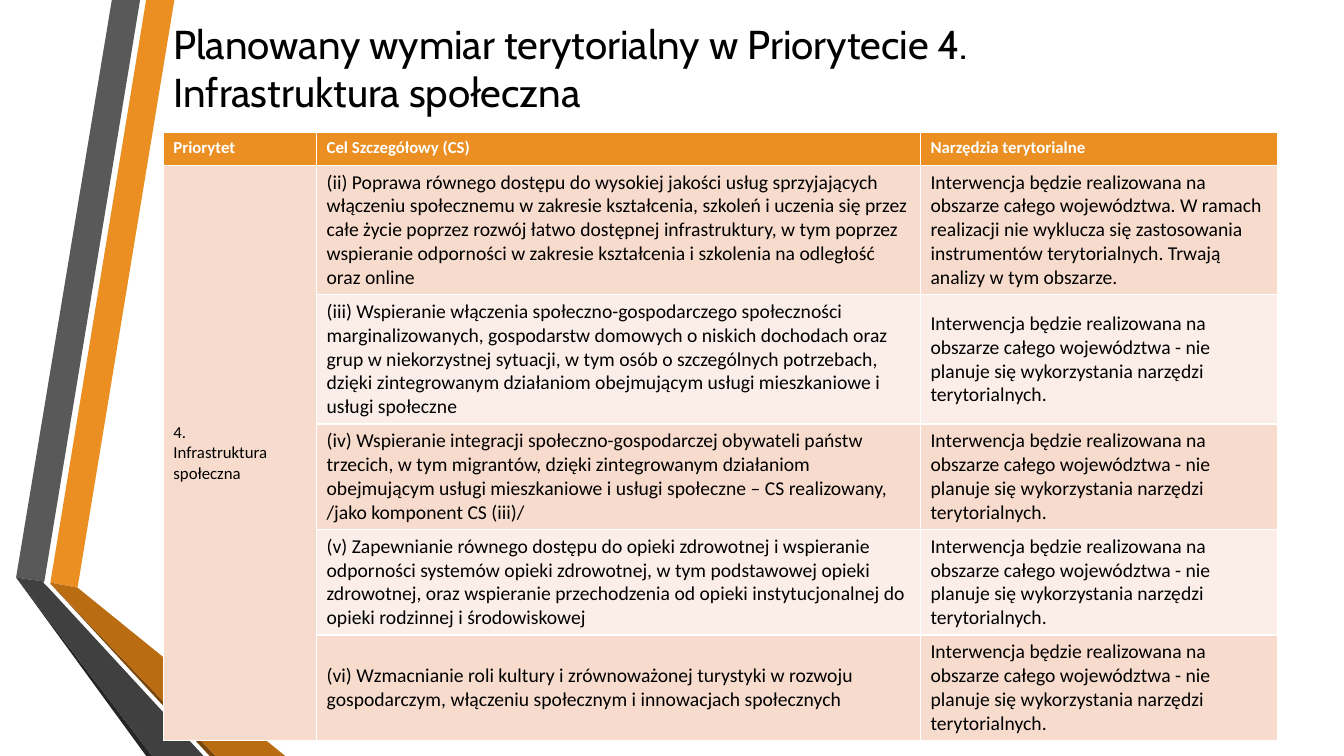
import pptx
import pptx.dml.color
import pptx.enum.text
import pptx.util
from pptx.util import Inches

THEME = {
    "orange": "EB8F22", "dark_orange": "B96C11", "brown": "7B480B",
    "grey": "595959", "dark_grey": "404040", "charcoal": "262626",
    "black": "000000", "white": "FFFFFF",
    "bands": ("F7DBCD", "FBEEE8"),
    "title_font": "Cabin", "table_font": "Calibri",
    "title_size": 28.8, "label_size": 12, "body_size": 14,
}


def paint(fill, color):
    fill.solid()
    fill.fore_color.rgb = pptx.dml.color.RGBColor.from_string(color)


def write(text_frame, text, font, size, color, bold=False):
    """Put text in the frame, left-aligned and centred in height."""
    text_frame.text = text
    text_frame.vertical_anchor = pptx.enum.text.MSO_ANCHOR.MIDDLE
    font_values = {"name": font, "size": pptx.util.Pt(size), "bold": bold}
    for paragraph in text_frame.paragraphs:
        paragraph.alignment = pptx.enum.text.PP_ALIGN.LEFT
        for run in paragraph.runs:
            for name, value in font_values.items():
                setattr(run.font, name, value)
            run.font.color.rgb = pptx.dml.color.RGBColor.from_string(color)


presentation = pptx.Presentation()
presentation.slide_width = Inches(13.33)
presentation.slide_height = Inches(7.5)
slide = presentation.slides.add_slide(presentation.slide_layouts[5])

# Folded ribbons on the left
ribbons = [
    ("orange", [(0.5, 5.78), (0.77, 5.83), (1.73, 0), (1.45, 0)]),
    ("grey", [(1.39, 0), (1.11, 0), (0.16, 5.73), (0.44, 5.77)]),
    ("charcoal", [(0.16, 5.73), (1.45, 7.5), (1.51, 7.5)]),
    ("brown", [(0.5, 5.79), (2.08, 7.5), (2.14, 7.5)]),
    ("dark_orange", [(0.5, 5.79), (2.14, 7.5), (2.83, 7.5), (0.77, 5.83), (0.5, 5.78)]),
    ("dark_grey", [(2.02, 7.5), (0.48, 5.83), (0.43, 5.78), (0.44, 5.77),
                   (0.16, 5.73), (1.51, 7.5)]),
]
for color, corners in ribbons:
    points = [(Inches(x), Inches(y)) for x, y in corners]
    builder = slide.shapes.build_freeform(*points[0])
    builder.add_line_segments(points[1:], close=True)
    ribbon = builder.convert_to_shape()
    ribbon.shadow.inherit = False
    ribbon.line.fill.background()
    paint(ribbon.fill, THEME[color])

# Title
title = slide.shapes.title
title_box = {"left": 1.62, "top": 0.17, "width": 11.32, "height": 1}
for name, value in title_box.items():
    setattr(title, name, Inches(value))
title.text_frame.auto_size = pptx.enum.text.MSO_AUTO_SIZE.NONE
write(title.text_frame,
      "Planowany wymiar terytorialny w Priorytecie 4.\vInfrastruktura społeczna",
      THEME["title_font"], THEME["title_size"], THEME["black"])

# Table of specific objectives
headings = ["Priorytet", "Cel Szczegółowy (CS)", "Narzędzia terytorialne"]
no_tools = ("Interwencja będzie realizowana na obszarze całego województwa - nie planuje się "
            "wykorzystania narzędzi terytorialnych.")
tools_possible = ("Interwencja będzie realizowana na obszarze całego województwa. W ramach "
                  "realizacji nie wyklucza się zastosowania instrumentów terytorialnych. "
                  "Trwają analizy w tym obszarze.")
objectives = [
    ("(ii) Poprawa równego dostępu do wysokiej jakości usług sprzyjających włączeniu "
     "społecznemu w zakresie kształcenia, szkoleń i uczenia się przez całe życie poprzez "
     "rozwój łatwo dostępnej infrastruktury, w tym poprzez wspieranie odporności w zakresie "
     "kształcenia i szkolenia na odległość oraz online", tools_possible),
    ("(iii) Wspieranie włączenia społeczno-gospodarczego społeczności marginalizowanych, "
     "gospodarstw domowych o niskich dochodach oraz grup w niekorzystnej sytuacji, w tym osób "
     "o szczególnych potrzebach, dzięki zintegrowanym działaniom obejmującym usługi "
     "mieszkaniowe i usługi społeczne", no_tools),
    ("(iv) Wspieranie integracji społeczno-gospodarczej obywateli państw trzecich, w tym "
     "migrantów, dzięki zintegrowanym działaniom obejmującym usługi mieszkaniowe i usługi "
     "społeczne – CS realizowany, /jako komponent CS (iii)/", no_tools),
    ("(v) Zapewnianie równego dostępu do opieki zdrowotnej i wspieranie odporności systemów "
     "opieki zdrowotnej, w tym podstawowej opieki zdrowotnej, oraz wspieranie przechodzenia od "
     "opieki instytucjonalnej do opieki rodzinnej i środowiskowej", no_tools),
    ("(vi) Wzmacnianie roli kultury i zrównoważonej turystyki w rozwoju gospodarczym, "
     "włączeniu społecznym i innowacjach społecznych", no_tools),
]
column_widths = [1.52, 5.99, 3.54]
row_heights = [0.33, 1.18, 1.18, 0.96, 0.96, 1.02]

table = slide.shapes.add_table(
    len(row_heights), len(column_widths), Inches(1.62), Inches(1.31),
    Inches(sum(column_widths)), Inches(sum(row_heights))).table
for column, width in zip(table.columns, column_widths):
    column.width = Inches(width)
for row, height in zip(table.rows, row_heights):
    row.height = Inches(height)

for index, heading in enumerate(headings):
    cell = table.cell(0, index)
    paint(cell.fill, THEME["orange"])
    write(cell.text_frame, heading, THEME["table_font"], THEME["label_size"],
          THEME["white"], bold=True)
    cell.vertical_anchor = pptx.enum.text.MSO_ANCHOR.TOP

for row_index, texts in enumerate(objectives, start=1):
    for column_index, text in enumerate(texts, start=1):
        cell = table.cell(row_index, column_index)
        paint(cell.fill, THEME["bands"][(row_index - 1) % 2])
        write(cell.text_frame, text, THEME["table_font"], THEME["body_size"], THEME["black"])
        cell.vertical_anchor = pptx.enum.text.MSO_ANCHOR.MIDDLE

priority = table.cell(1, 0)
priority.merge(table.cell(len(objectives), 0))
paint(priority.fill, THEME["bands"][0])
write(priority.text_frame, "4.\nInfrastruktura społeczna", THEME["table_font"],
      THEME["label_size"], THEME["black"])
priority.vertical_anchor = pptx.enum.text.MSO_ANCHOR.MIDDLE

presentation.save("out.pptx")
